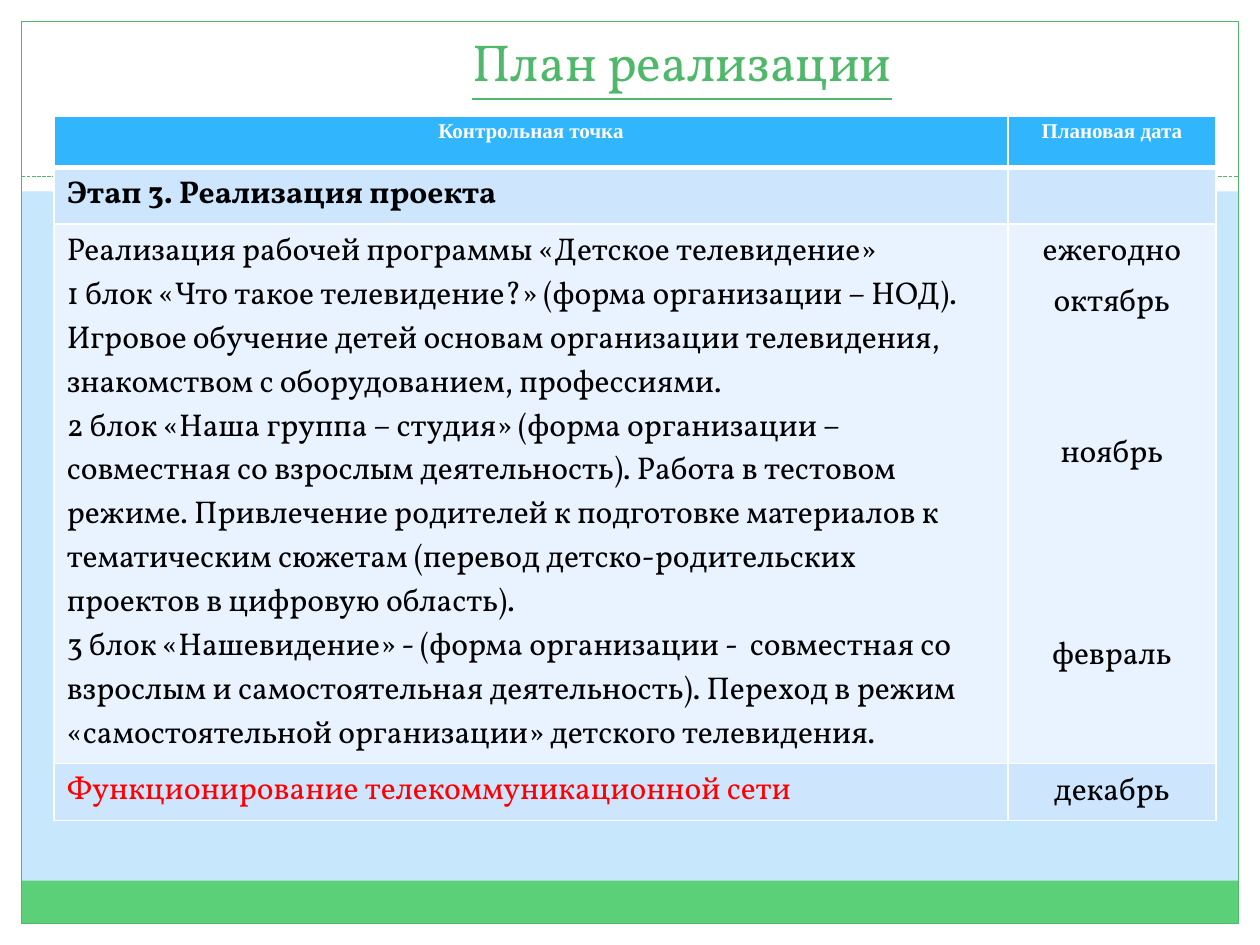
from pptx import Presentation
from pptx.dml.color import RGBColor
from pptx.enum.dml import MSO_LINE
from pptx.enum.shapes import MSO_CONNECTOR, MSO_SHAPE
from pptx.enum.text import MSO_ANCHOR, MSO_AUTO_SIZE, PP_ALIGN
from pptx.oxml.ns import qn
from pptx.util import Inches, Pt
from lxml.etree import SubElement

HEADING = "План реализации"
HEADERS = ["Контрольная точка", "Плановая дата"]
STAGE = "Этап 3. Реализация проекта"
STEPS = [
    "Реализация рабочей программы «Детское телевидение»",
    "1 блок «Что такое телевидение?» (форма организации – НОД). Игровое обучение детей "
    "основам организации телевидения, знакомством с оборудованием, профессиями.",
    "2 блок «Наша группа – студия» (форма организации – совместная со взрослым "
    "деятельность). Работа в тестовом режиме. Привлечение родителей к подготовке "
    "материалов к тематическим сюжетам (перевод детско-родительских проектов в "
    "цифровую область).",
    "3 блок «Нашевидение» - (форма организации -  совместная со взрослым и "
    "самостоятельная деятельность). Переход в режим «самостоятельной организации» "
    "детского телевидения.",
]
DATES = ["ежегодно", "октябрь", "ноябрь", "февраль"]
LINES_BEFORE_DATE = [0, 0, 2, 3]
RESULT, RESULT_DATE = "Функционирование телекоммуникационной сети", "декабрь"

THEME = {
    "font": "Vollkorn", "header_font": "Times New Roman",
    "title_size": 29.7, "header_size": 12, "body_size": 18, "date_line": 28.9,
    "sky": "C6E7FC", "white": "FFFFFF", "green": "50B86A", "band": "5BD078",
    "header": "31B6FD", "dark_row": "CEE5FE", "light_row": "E8F3FF",
    "text": "000000", "accent": "FF0000",
}
SLIDE_W, SLIDE_H, MARGIN = 10, 7.5, 0.17
INNER_W, INNER_H = SLIDE_W - 2 * MARGIN, SLIDE_H - 2 * MARGIN
COLUMN_WIDTHS = [7.57, 1.65]
ROW_HEIGHTS = [0.41, 0.44, 4.28, 0.45]


def color(name):
    return RGBColor.from_string(THEME[name])


def add_block(slide, left, top, width, height, fill=None, line=None):
    block = slide.shapes.add_shape(
        MSO_SHAPE.RECTANGLE, Inches(left), Inches(top), Inches(width), Inches(height))
    block.shadow.inherit = False
    if fill:
        block.fill.solid()
        block.fill.fore_color.rgb = color(fill)
    else:
        block.fill.background()
    if line:
        block.line.color.rgb = color(line)
        block.line.width = Pt(0.75)
    else:
        block.line.fill.background()


def style_font(font, size, tint, family="font", bold=False):
    font.name = THEME[family]
    font.size = Pt(THEME[size])
    font.color.rgb = color(tint)
    font.bold = bold


def add_borders(cell, bottom):
    properties = cell._tc.get_or_add_tcPr()
    for position, side in enumerate(("lnL", "lnR", "lnT", "lnB")):
        width = bottom if side == "lnB" else 1
        border = properties.makeelement(qn(f"a:{side}"), {"w": str(Pt(width))})
        paint = SubElement(border, qn("a:solidFill"))
        SubElement(paint, qn("a:srgbClr"), val=THEME["white"])
        properties.insert(position, border)


def fill_cell(cell, lines, fill, centered=False, bottom=1, gaps=None, **font):
    cell.fill.solid()
    cell.fill.fore_color.rgb = color(fill)
    add_borders(cell, bottom)
    cell.text_frame.text = "\n".join(lines)
    if centered:
        cell.margin_left = cell.margin_right = Inches(0.07)
        cell.margin_top = cell.margin_bottom = 0
    for index, paragraph in enumerate(cell.text_frame.paragraphs):
        style_font(paragraph.font, **font)
        for run in paragraph.runs:
            style_font(run.font, **font)
        if centered:
            paragraph.alignment = PP_ALIGN.CENTER
            paragraph.line_spacing = 1.15
        if gaps:
            paragraph.space_before = Pt(gaps[index] * THEME["date_line"])


def add_backdrop(slide):
    slide.background.fill.solid()
    slide.background.fill.fore_color.rgb = color("sky")
    for box in [
        (0, SLIDE_H - MARGIN, SLIDE_W, MARGIN),
        (0, 0, SLIDE_W, 1.52),
        (0, 0, MARGIN, SLIDE_H),
        (SLIDE_W - MARGIN, 0, MARGIN, SLIDE_H),
    ]:
        add_block(slide, *box, fill="white")
    add_block(slide, MARGIN, 6.99, INNER_W, 0.34, fill="band")
    add_block(slide, MARGIN, MARGIN, INNER_W, INNER_H, line="green")
    divider = slide.shapes.add_connector(
        MSO_CONNECTOR.STRAIGHT, Inches(MARGIN), Inches(1.4),
        Inches(SLIDE_W - MARGIN), Inches(1.4))
    divider.line.color.rgb = color("green")
    divider.line.width = Pt(0.75)
    divider.line.dash_style = MSO_LINE.SQUARE_DOT
    SubElement(divider._element.spPr, qn("a:effectLst"))


def add_title(slide):
    title = slide.shapes.title
    title.left, title.top = Inches(1.06), Inches(0.05)
    title.width, title.height = Inches(8.71), Inches(0.68)
    frame = title.text_frame
    frame.text = HEADING
    frame.auto_size = MSO_AUTO_SIZE.NONE
    frame.vertical_anchor = MSO_ANCHOR.BOTTOM
    frame.margin_bottom = 0
    heading = frame.paragraphs[0]
    heading.alignment = PP_ALIGN.CENTER
    style_font(heading.runs[0].font, "title_size", "green")
    heading.runs[0].font.underline = True


def add_plan(slide):
    plan = slide.shapes.add_table(
        len(ROW_HEIGHTS), len(COLUMN_WIDTHS), Inches(0.43), Inches(0.92),
        Inches(sum(COLUMN_WIDTHS)), Inches(sum(ROW_HEIGHTS))).table
    for column, width in zip(plan.columns, COLUMN_WIDTHS):
        column.width = Inches(width)
    for row, height in zip(plan.rows, ROW_HEIGHTS):
        row.height = Inches(height)

    for index, header in enumerate(HEADERS):
        fill_cell(plan.cell(0, index), [header], "header", centered=True, bottom=3,
                  size="header_size", tint="white", family="header_font", bold=True)
    body = {"size": "body_size", "tint": "text"}
    fill_cell(plan.cell(1, 0), [STAGE], "dark_row", bold=True, **body)
    fill_cell(plan.cell(1, 1), [], "dark_row", **body)
    fill_cell(plan.cell(2, 0), STEPS, "light_row", **body)
    fill_cell(plan.cell(2, 1), DATES, "light_row", centered=True,
              gaps=LINES_BEFORE_DATE, **body)
    fill_cell(plan.cell(3, 0), [RESULT], "dark_row", size="body_size", tint="accent")
    fill_cell(plan.cell(3, 1), [RESULT_DATE], "dark_row", centered=True, **body)


def main():
    deck = Presentation()
    deck.slide_width, deck.slide_height = Inches(SLIDE_W), Inches(SLIDE_H)
    slide = deck.slides.add_slide(deck.slide_layouts[5])
    add_backdrop(slide)
    add_title(slide)
    slide.shapes._spTree.append(slide.shapes.title._element)
    add_plan(slide)
    deck.save("out.pptx")


if __name__ == "__main__":
    main()
